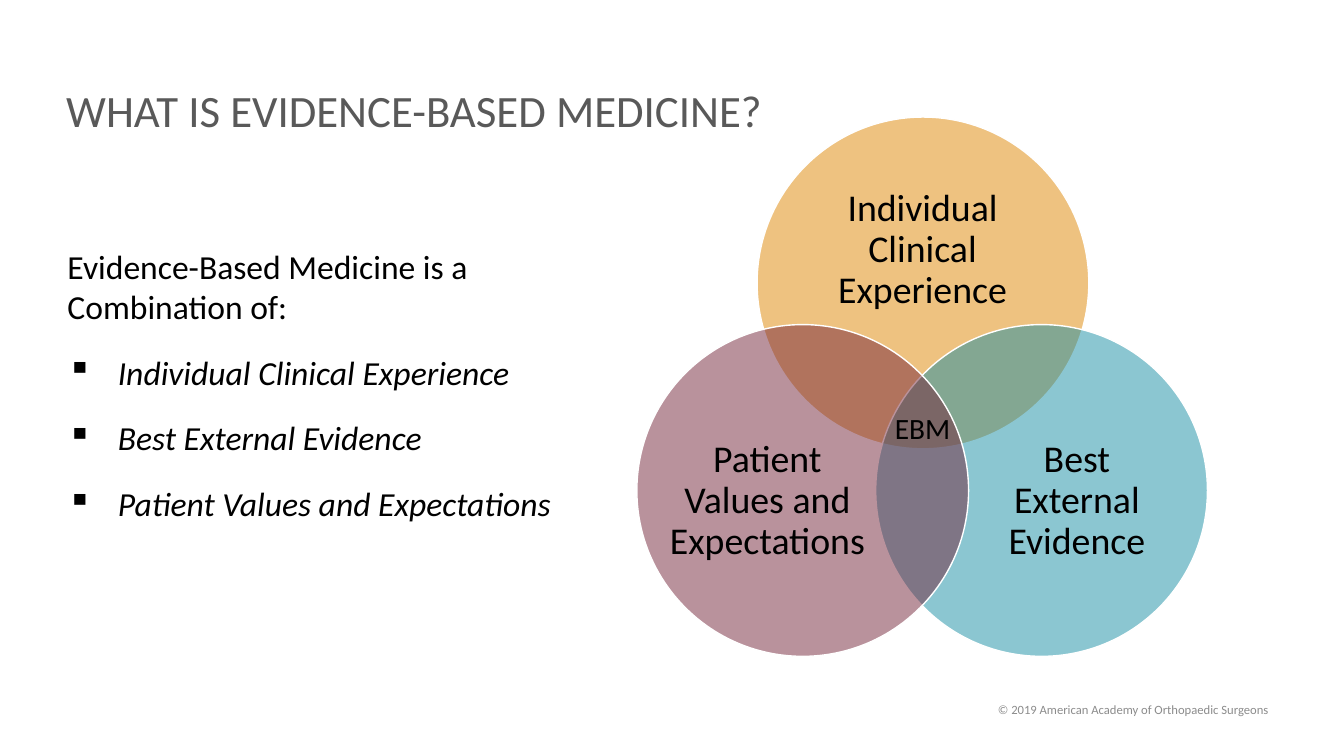
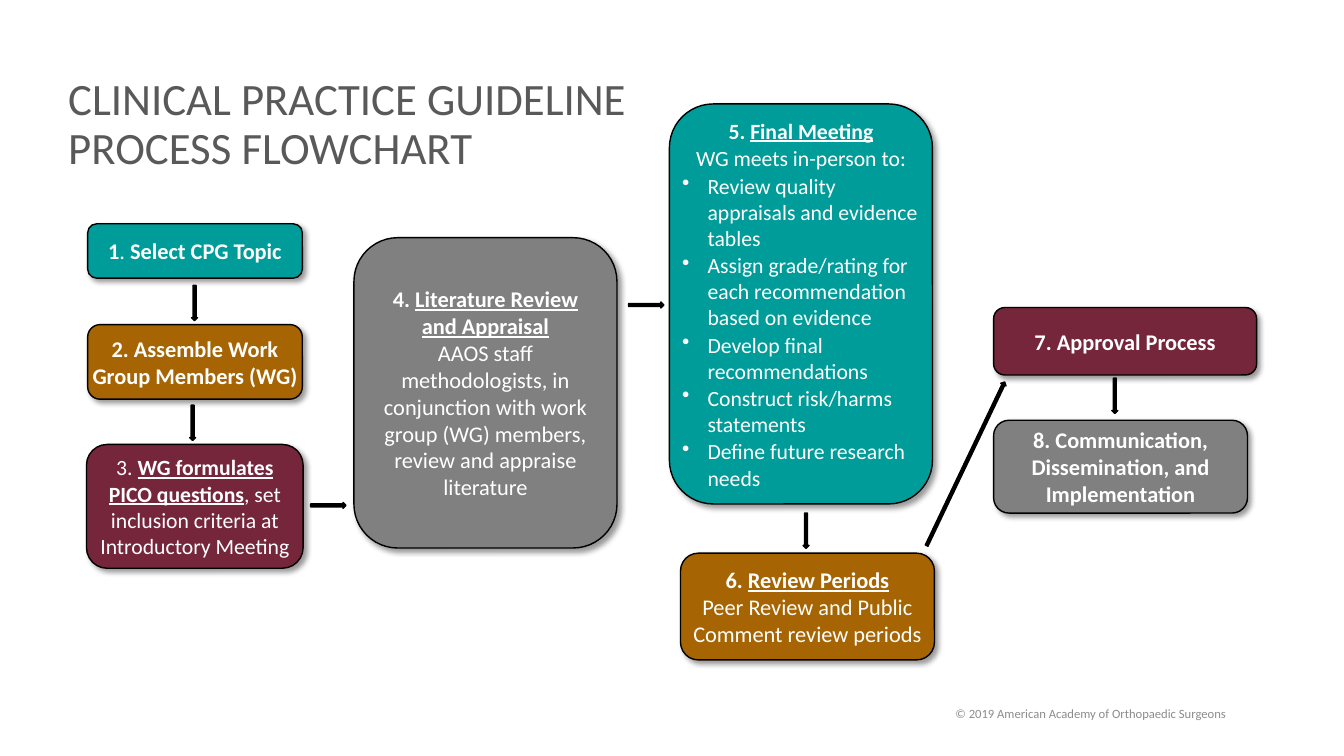
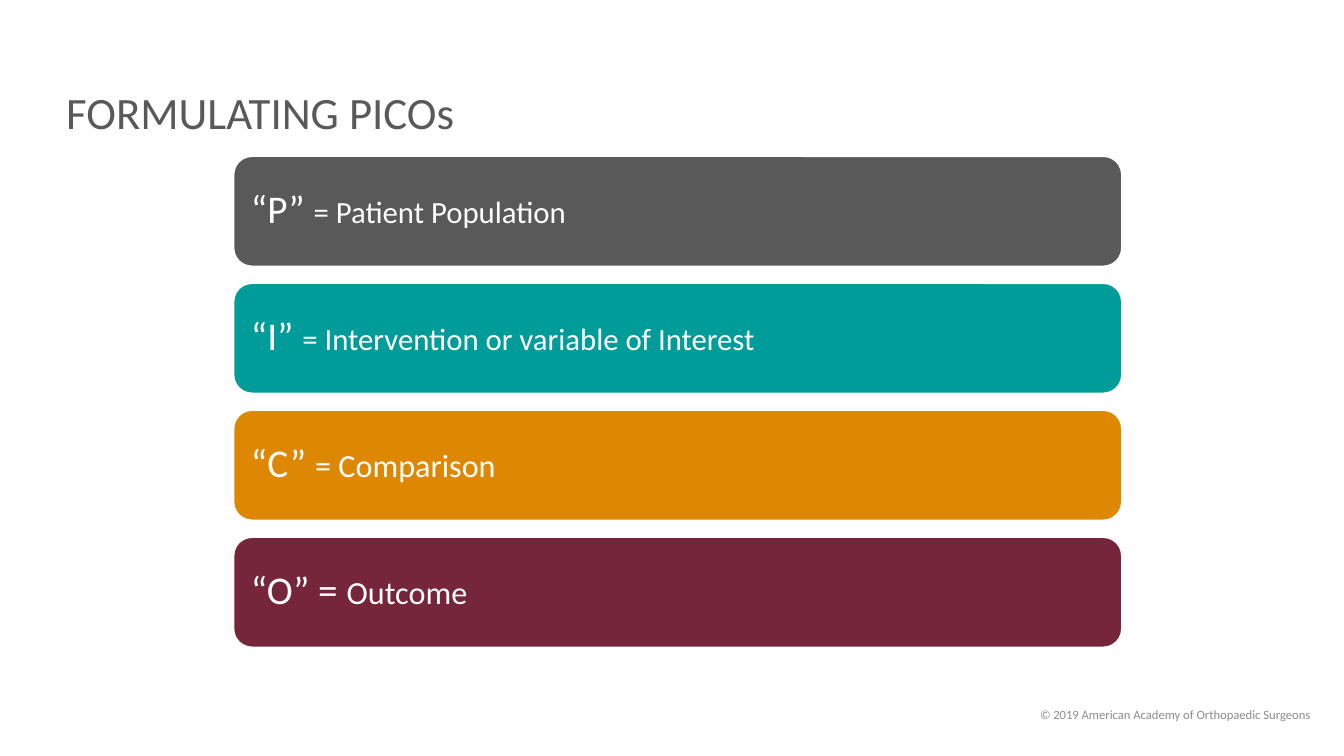
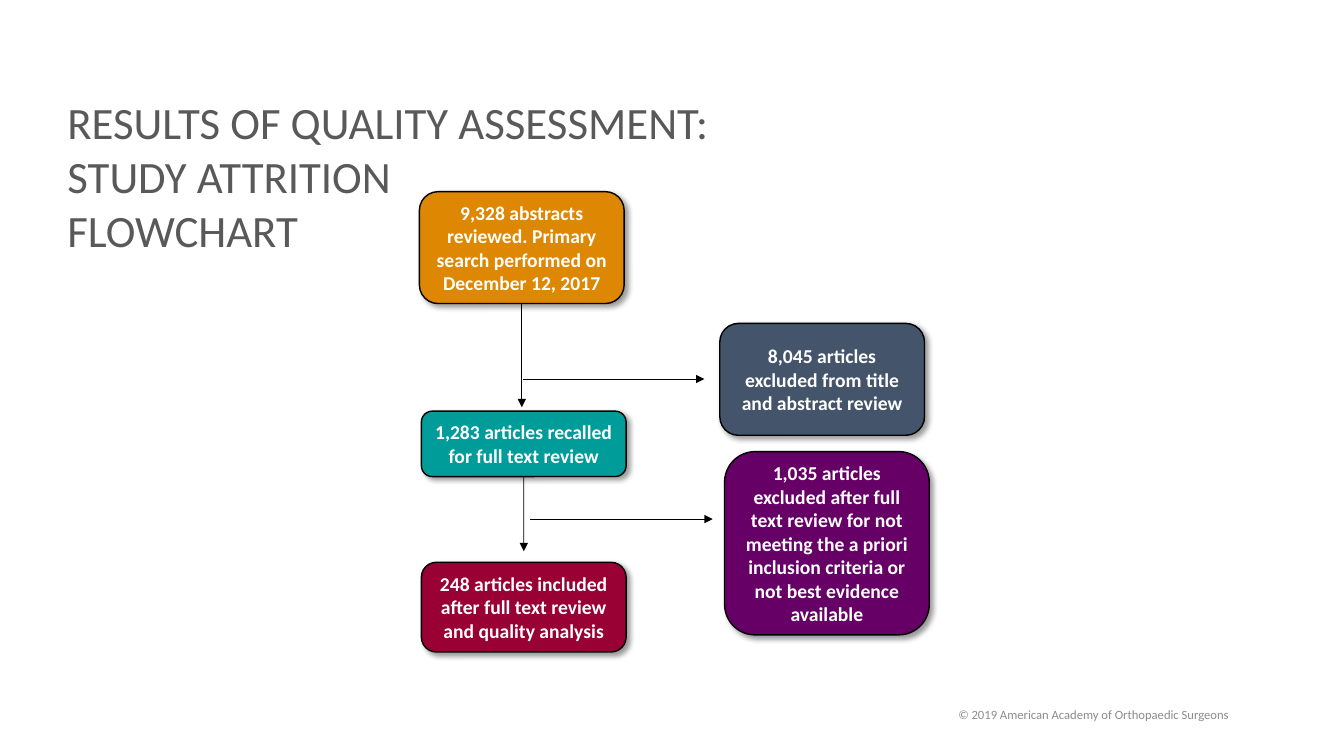
import pptx
import pptx.util
import pptx.dml.color
import pptx.enum.shapes
import pptx.enum.text
import pptx.oxml
import pptx.oxml.ns
import lxml.etree

Cm, Pt = pptx.util.Cm, pptx.util.Pt
rgb = pptx.dml.color.RGBColor.from_string
qn = pptx.oxml.ns.qn
MSO = pptx.enum.shapes.MSO_SHAPE
ALIGN = pptx.enum.text.PP_ALIGN
MIDDLE = pptx.enum.text.MSO_ANCHOR.MIDDLE
TOP = pptx.enum.text.MSO_ANCHOR.TOP

FONT = "Calibri"
BLACK, WHITE = "000000", "FFFFFF"
DARK, GREY, FOOT = "595959", "808080", "8C8C8C"
TEAL, ORANGE, BROWN, WINE = "009C99", "DE8703", "A66502", "75263B"


def write(sp, paras, size, color, align=ALIGN.LEFT, style="", margins=(0.25, 0.13),
          anchor=MIDDLE, after=0, spacing=1.0):
    """Fill a shape; a paragraph is a string or a list of (text, style, size) runs."""
    tf = sp.text_frame
    tf.word_wrap = True
    tf.vertical_anchor = anchor
    tf.margin_left = tf.margin_right = Cm(margins[0])
    tf.margin_top = tf.margin_bottom = Cm(margins[1])
    for i, para in enumerate(paras):
        runs = [(para, style, size)] if isinstance(para, str) else para
        p = tf.paragraphs[0] if i == 0 else tf.add_paragraph()
        p.text = runs[0][0]
        for text, _, _ in runs[1:]:
            p.add_run().text = text
        p.alignment = align
        p.line_spacing = spacing
        p.space_after = Pt(after)
        for r, (_, marks, points) in zip(p.runs, runs):
            r.font.name = FONT
            r.font.size = Pt(points)
            r.font.color.rgb = rgb(color)
            r.font.bold = "b" in marks
            r.font.italic = "i" in marks
            r.font.underline = "u" in marks
    return tf


def add_box(s, kind, x, y, w, h, fill, line=BLACK, shadow=False):
    """Add a filled preset shape with a 1 pt outline."""
    sp = s.shapes.add_shape(kind, Cm(x), Cm(y), Cm(w), Cm(h))
    sp.shadow.inherit = False
    sp.fill.solid()
    sp.fill.fore_color.rgb = rgb(fill)
    sp.line.color.rgb = rgb(line)
    sp.line.width = Pt(1)
    if shadow:
        effects = sp._element.spPr.find(qn("a:effectLst"))
        outer = lxml.etree.SubElement(effects, qn("a:outerShdw"), blurRad=str(Pt(4)),
                                      dist=str(Pt(3)), dir="2700000", algn="tl", rotWithShape="0")
        clr = lxml.etree.SubElement(outer, qn("a:srgbClr"), val=BLACK)
        lxml.etree.SubElement(clr, qn("a:alpha"), val="40000")
    return sp


prs = pptx.Presentation()
prs.slide_width, prs.slide_height = Cm(33.87), Cm(19.05)

# Titles and footers: title lines, title frame, space after, footer place and alignment
frames = [
    (["WHAT IS EVIDENCE-BASED MEDICINE?"], (1.42, 1.9, 30.91, 1.9), 0, (20.78, 17.37), ALIGN.RIGHT),
    (["CLINICAL PRACTICE GUIDELINE", "PROCESS FLOWCHART"], (1.47, 2.21, 30.91, 1.9), 0,
     (21.77, 17.48), ALIGN.CENTER),
    (["FORMULATING PICOs"], (1.42, 1.96, 30.91, 1.9), 0, (21.84, 17.5), ALIGN.RIGHT),
    (["RESULTS OF QUALITY ASSESSMENT:", "STUDY ATTRITION", "FLOWCHART"],
     (1.45, 1.93, 18.14, 5.18), 4, (21.84, 17.5), ALIGN.CENTER),
]
for lines, frame, after, (x, y), align in frames:
    s = prs.slides.add_slide(prs.slide_layouts[6])
    title = s.shapes.add_textbox(*[Cm(v) for v in frame])
    write(title, lines, 32, DARK, after=after, spacing=0.9)
    footer = s.shapes.add_textbox(Cm(x), Cm(y), Cm(11.43), Cm(1.02))
    write(footer, ["© 2019 American Academy of Orthopaedic Surgeons"], 9, FOOT, align)
venn, process, pico, attrition = prs.slides

# Slide 1: definition list
sp = venn.shapes.add_textbox(Cm(0.5), Cm(6.07), Cm(13.74), Cm(7.32))
definition = write(sp, [
    "Evidence-Based Medicine is a Combination of:",
    [("Individual Clinical Experience", "i", 24)],
    [("Best External Evidence", "i", 24)],
    [("Patient Values and Expectations", "i", 24)],
], 24, BLACK, anchor=TOP, after=18)

# Slide 1: half-transparent circles and their labels
circles = [
    (19.08, 2.95, ORANGE, "Individual Clinical Experience", (20.19, 4.42, 6.12, 3.76)),
    (22.07, 8.18, "198EA5", "Best External Evidence", (24.64, 10.34, 5, 4.6)),
    (16.05, 8.18, WINE, "Patient Values and Expectations", (16.84, 10.34, 5, 4.6)),
]
for x, y, fill, label, frame in circles:
    sp = add_box(venn, MSO.OVAL, x, y, 8.36, 8.36, fill, WHITE)
    clr = sp._element.spPr.find(qn("a:solidFill")).find(qn("a:srgbClr"))
    lxml.etree.SubElement(clr, qn("a:alpha"), val="50000")
    sp = venn.shapes.add_textbox(*[Cm(v) for v in frame])
    write(sp, [label], 27, BLACK, ALIGN.CENTER, margins=(0, 0), spacing=0.9)
sp = venn.shapes.add_textbox(Cm(22.3), Cm(10.21), Cm(2.08), Cm(1.19))
write(sp, ["EBM"], 21, BLACK, anchor=TOP)

# Slide 2: process steps
steps = [
    (2.21, 5.64, 5.41, 1.37, TEAL, (0.1, 0.1),
     [[("1", "b", 16), (". ", "", 16), ("Select CPG Topic", "b", 16)]]),
    (2.21, 8.18, 5.41, 1.88, BROWN, (0, 0), ["2. Assemble Work Group Members (WG)"]),
    (2.18, 11.2, 5.46, 3.12, WINE, (0, 0),
     [[("3. ", "", 15.5), ("WG formulates PICO questions", "bu", 15.5),
       (", set inclusion criteria at Introductory Meeting", "", 15.5)]]),
    (8.92, 5.99, 6.63, 7.82, GREY, (0.25, 0.1),
     [[("4. ", "b", 16), ("Literature Review and Appraisal", "bu", 16)],
      [("AAOS staff methodologists, in conjunction with work group (WG) members, "
        "review and appraise literature", "", 16)]]),
    (17.15, 13.94, 6.4, 2.69, BROWN, (0, 0),
     [[("6. ", "b", 16), ("Review Periods", "bu", 16)],
      [("Peer Review and Public Comment review periods", "", 16)]]),
    (25.04, 7.75, 6.63, 1.7, WINE, (0.25, 0.1), ["7. Approval Process"]),
    (25.04, 10.59, 6.4, 2.34, GREY, (0, 0),
     ["8. Communication, Dissemination, and Implementation"]),
]
for x, y, w, h, fill, margins, paras in steps:
    sp = add_box(process, MSO.ROUNDED_RECTANGLE, x, y, w, h, fill, shadow=True)
    write(sp, paras, 16, WHITE, ALIGN.CENTER, "b", margins)

# Slide 2: final meeting, with its list of tasks
sp = add_box(process, MSO.ROUNDED_RECTANGLE, 16.87, 2.62, 6.63, 10.08, TEAL, shadow=True)
meeting = write(sp, [
    [("5. ", "b", 15.5), ("Final Meeting", "bu", 15.5)],
    "WG meets in-person to:",
    "Review quality appraisals and evidence tables",
    "Assign grade/rating for each recommendation based on evidence",
    "Develop final recommendations",
    "Construct risk/harms statements",
    "Define future research needs",
], 15.5, WHITE, ALIGN.CENTER, margins=(0, 0), after=1)
for p in meeting.paragraphs[2:]:
    p.alignment = ALIGN.LEFT

# Slide 2: block arrows (left, top, length, rotation)
arrows = [
    (4.83, 7.19, 0.89, 0), (4.78, 10.21, 0.89, 0), (8.2, 12.29, 0.89, 270),
    (16.21, 7.24, 0.89, 270), (28.02, 9.53, 0.89, 0), (20.24, 12.93, 0.89, 0),
    (24.26, 9.4, 4.57, 205.5),
]
for x, y, length, rotation in arrows:
    sp = add_box(process, MSO.DOWN_ARROW, x, y, 0.15, length, BLACK)
    sp.rotation = rotation

# Indents and bullets of both lists: paragraphs, bullet, left margin, first-line indent
indents = [
    (definition.paragraphs[:1], None, 0.95, 0),
    (definition.paragraphs[1:], "▪", 2.22, -1.27),
    (meeting.paragraphs[1:2], None, 0.64, -0.64),
    (meeting.paragraphs[2:], "•", 0.64, -0.64),
]
for paragraphs, bullet, margin, indent in indents:
    for p in paragraphs:
        pPr = p._p.get_or_add_pPr()
        pPr.set("marL", str(Cm(margin)))
        pPr.set("indent", str(Cm(indent)))
        if bullet:
            lxml.etree.SubElement(pPr, qn("a:buChar"), char=bullet)

# Slide 3: one bar per letter
bars = [
    (DARK, [("“P” ", "", 28), ("= Patient Population", "", 22)]),
    (TEAL, [("“I” ", "", 28), ("= Intervention or variable of Interest", "", 22)]),
    (ORANGE, [("“C” ", "", 28), ("= Comparison", "", 23)]),
    (WINE, [("“O” = ", "", 28), ("Outcome", "", 23)]),
]
for i, (fill, runs) in enumerate(bars):
    sp = add_box(pico, MSO.ROUNDED_RECTANGLE, 5.89, 3.94 + 3.2 * i, 22.38, 2.77, fill, WHITE)
    write(sp, [runs], 28, WHITE, margins=(0.3, 0.3), spacing=0.9)

# Slide 4: counts of articles
counts = [
    (10.57, 4.83, 2.82, ORANGE,
     "9,328 abstracts reviewed. Primary search performed on December 12, 2017"),
    (10.62, 10.36, 1.65, TEAL, "1,283 articles recalled for full text review"),
    (10.62, 14.17, 2.26, "990033",
     "248 articles included after full text review and quality analysis"),
    (18.14, 8.15, 2.82, "44546A", "8,045 articles excluded from title and abstract review"),
    (18.26, 11.38, 4.62, "660066",
     "1,035 articles excluded after full text review for not meeting the a priori "
     "inclusion criteria or not best evidence available"),
]
boxes = []
for x, y, h, fill, text in counts:
    sp = add_box(attrition, MSO.ROUNDED_RECTANGLE, x, y, 5.16, h, fill, shadow=True)
    write(sp, [text], 14, WHITE, ALIGN.CENTER, "b")
    boxes.append(sp)

# Slide 4: arrows, the vertical ones joined to the box above
links = [
    (13.15, 7.65, 13.15, 10.26, boxes[0]),
    (13.2, 12.01, 13.2, 13.89, boxes[1]),
    (13.18, 9.55, 17.75, 9.55, None),
    (13.36, 13.08, 17.96, 13.08, None),
]
for x1, y1, x2, y2, source in links:
    c = attrition.shapes.add_connector(pptx.enum.shapes.MSO_CONNECTOR.STRAIGHT,
                                       Cm(x1), Cm(y1), Cm(x2), Cm(y2))
    if source is not None:
        c.begin_connect(source, 2)
    c.line.color.rgb = rgb(BLACK)
    c.line.width = Pt(0.5)
    lxml.etree.SubElement(c.line._get_or_add_ln(), qn("a:tailEnd"), type="triangle")
    lxml.etree.SubElement(c._element.spPr, qn("a:effectLst"))

prs.save("out.pptx")
